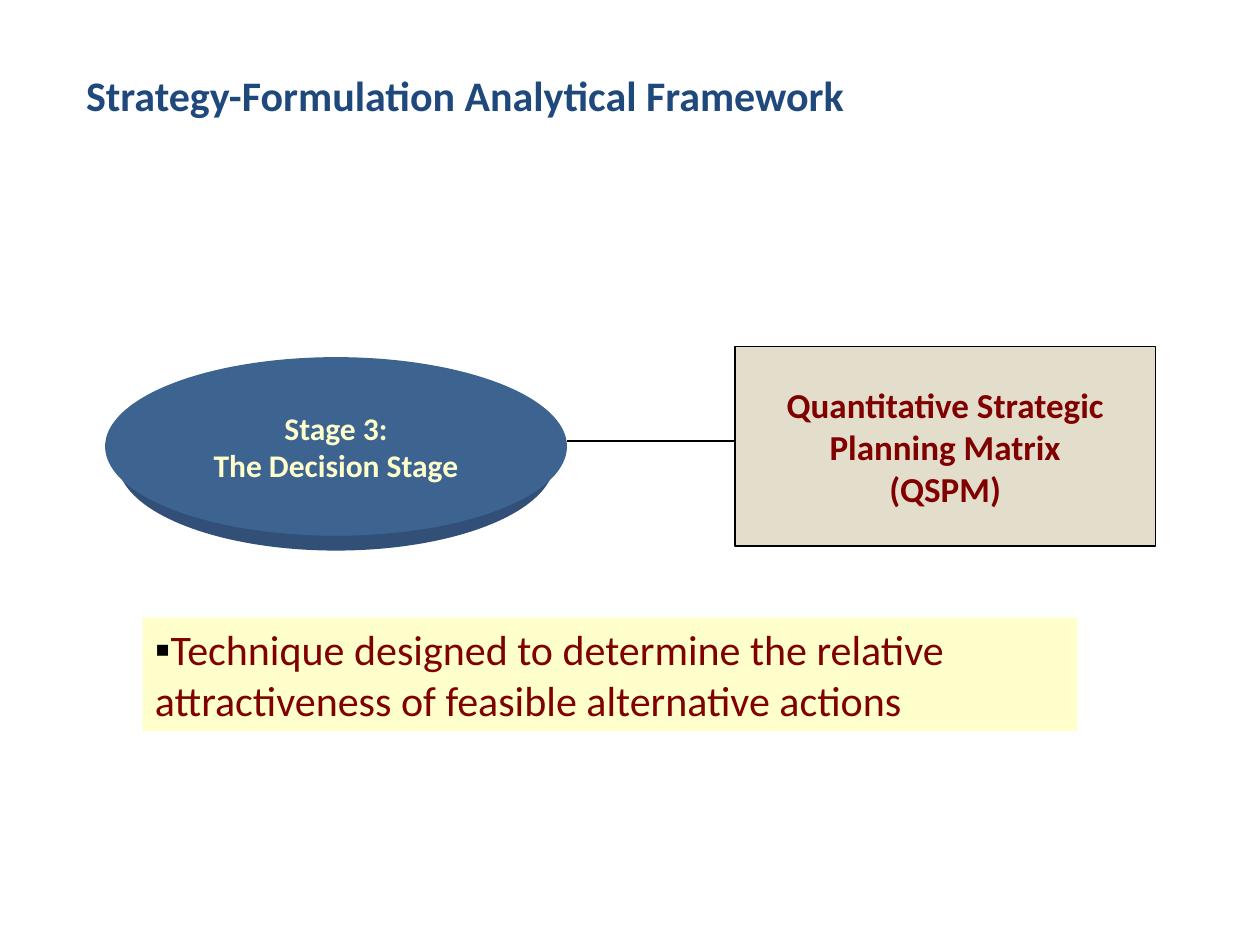
from lxml import etree
from pptx import Presentation
from pptx import util as u
from pptx.dml.color import RGBColor
from pptx.enum import shapes, text
from pptx.oxml.ns import qn

NAVY = RGBColor(0x1F, 0x49, 0x7D)
BLUE = RGBColor(0x3D, 0x64, 0x91)
DEEP_BLUE = RGBColor(0x32, 0x50, 0x77)
CREAM = RGBColor(0xFF, 0xFF, 0xCC)
SAND = RGBColor(0xE3, 0xDD, 0xCB)
MAROON = RGBColor(0x80, 0x00, 0x00)
BLACK = RGBColor(0x00, 0x00, 0x00)
FONT = "Calibri"


def write(box, content, size, color, bold=False, align=text.PP_ALIGN.LEFT,
          anchor=text.MSO_ANCHOR.TOP, wrap=True):
    frame = box.text_frame
    frame.word_wrap = wrap
    frame.auto_size = text.MSO_AUTO_SIZE.NONE
    frame.vertical_anchor = anchor
    para = frame.paragraphs[0]
    para.text = content
    para.alignment = align
    para.space_before = u.Pt(0)
    for span in para.runs:
        span.font.name = FONT
        span.font.size = u.Pt(size)
        span.font.bold = bold
        span.font.color.rgb = color
    return para


class FrameworkSlide:
    def __init__(self, deck):
        self.page = deck.slides.add_slide(deck.slide_layouts[1])
        self.line_width = u.Pt(0.75)

    def place(self, box, left, top, width, height):
        box.left, box.top = u.Cm(left), u.Cm(top)
        box.width, box.height = u.Cm(width), u.Cm(height)

    def title(self, content, *area):
        box = self.page.shapes.title
        self.place(box, *area)
        write(box, content, 24, NAVY, bold=True)

    def bullet(self, content, *area):
        box = self.page.placeholders[1]
        self.place(box, *area)
        box.fill.solid()
        box.fill.fore_color.rgb = CREAM
        para = write(box, content, 24, MAROON)
        props = para._p.get_or_add_pPr()
        props.set("marL", "0")
        props.set("indent", "0")
        color = etree.SubElement(props, qn("a:buClr"))
        etree.SubElement(color, qn("a:srgbClr"), val=str(BLACK))
        etree.SubElement(props, qn("a:buSzPct"), val="105000")
        etree.SubElement(props, qn("a:buChar"), char="▪")

    def shape(self, kind, fill, *area, outline=None):
        box = self.page.shapes.add_shape(kind, *(u.Cm(length) for length in area))
        box.shadow.inherit = False
        box.fill.solid()
        box.fill.fore_color.rgb = fill
        if outline is None:
            box.line.fill.background()
        else:
            box.line.color.rgb = outline
            box.line.width = self.line_width
        return box

    def label(self, box, content, size, color):
        write(box, content, size, color, bold=True, align=text.PP_ALIGN.CENTER,
              anchor=text.MSO_ANCHOR.MIDDLE, wrap=False)

    def stage(self, content, left, top, width, height):
        oval = shapes.MSO_SHAPE.OVAL
        self.shape(oval, DEEP_BLUE, left + 0.25, top + 0.3, width - 0.5, height)
        front = self.shape(oval, BLUE, left, top, width, height)
        self.label(front, content, 18, CREAM)

    def matrix(self, content, *area):
        box = self.shape(shapes.MSO_SHAPE.RECTANGLE, SAND, *area, outline=BLACK)
        self.label(box, content, 20, MAROON)

    def link(self, left, right, level):
        line = self.page.shapes.add_connector(
            shapes.MSO_CONNECTOR.STRAIGHT,
            u.Cm(left), u.Cm(level), u.Cm(right), u.Cm(level))
        line.line.color.rgb = BLACK
        line.line.width = self.line_width
        etree.SubElement(line._element.spPr, qn("a:effectLst"))


def main():
    deck = Presentation()
    deck.slide_width, deck.slide_height = u.Cm(25.4), u.Cm(19.05)
    slide = FrameworkSlide(deck)
    slide.title("Strategy-Formulation Analytical Framework", 1.48, 1.27, 16.94, 2.29)
    slide.link(11.43, 14.82, 8.89)
    slide.stage("Stage 3:\nThe Decision Stage", 2.12, 7.2, 9.31, 3.6)
    slide.matrix("Quantitative Strategic\nPlanning Matrix\n(QSPM)", 14.82, 6.99, 8.47, 4.02)
    slide.bullet("Technique designed to determine the relative attractiveness "
                 "of feasible alternative actions", 2.87, 12.45, 18.85, 2.29)
    deck.save("out.pptx")


if __name__ == "__main__":
    main()
